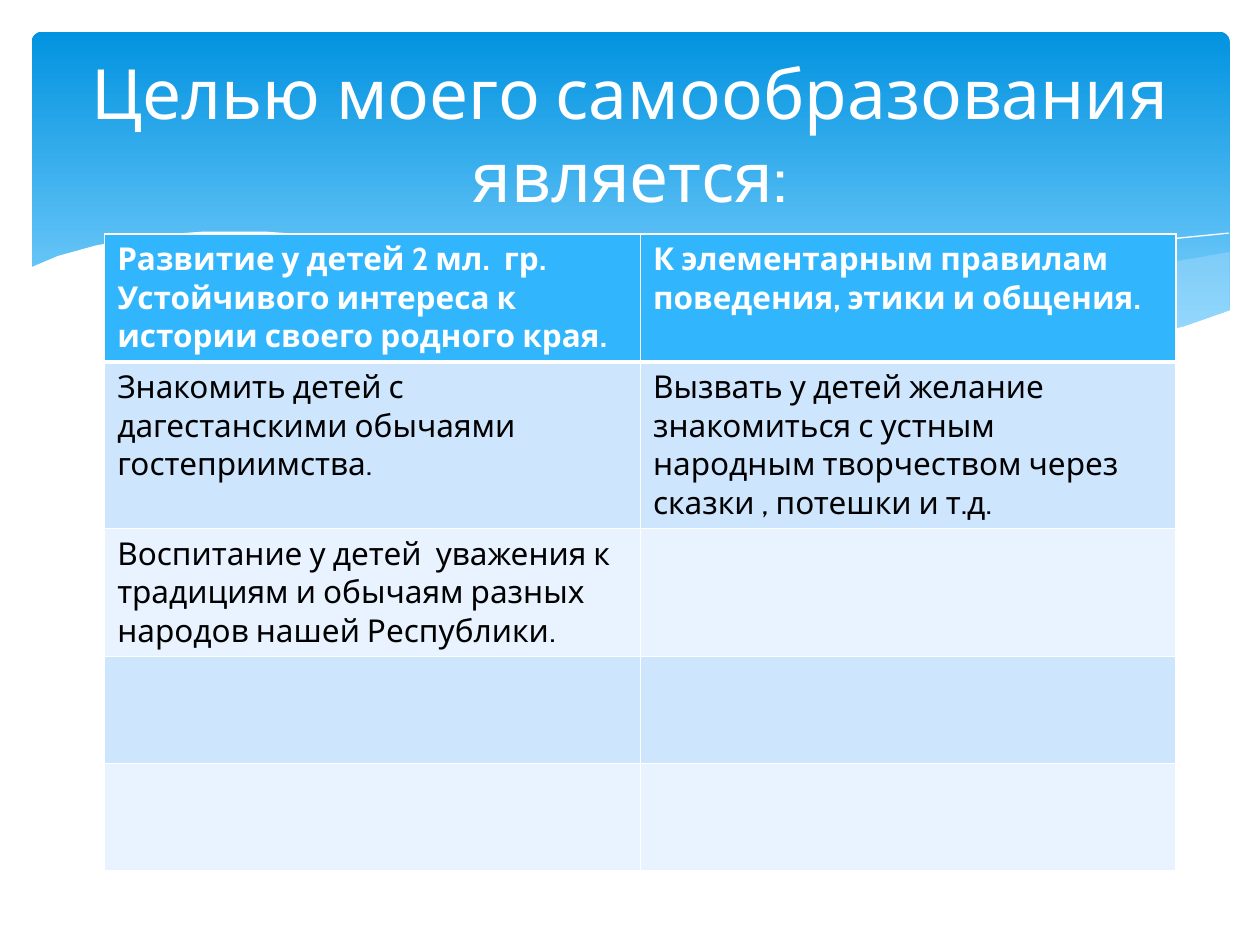
"""Build the slide that states the goals of self-education."""
from lxml.etree import SubElement
from pptx import Presentation
from pptx.dml.color import RGBColor
from pptx.enum.shapes import MSO_SHAPE
from pptx.enum.text import MSO_ANCHOR, MSO_AUTO_SIZE, PP_ALIGN
from pptx.oxml.ns import qn
from pptx.util import Cm, Pt

FONT = "Cabin"
COLORS = {
    "white": "FFFFFF", "text": "000000", "band_top": "0293E0", "band_bottom": "83D3FE",
    "wave": "C6E7FC", "header": "31B6FD", "odd": "CEE5FE", "even": "E8F3FF",
}
TITLE = "Целью моего самообразования является:"
ROWS = [
    ("Развитие у детей 2 мл.  гр. Устойчивого интереса к истории своего родного края.",
     "К элементарным правилам поведения, этики и общения."),
    ("Знакомить детей с дагестанскими обычаями гостеприимства.",
     "Вызвать у детей желание знакомиться с устным народным творчеством через "
     "сказки , потешки и т.д."),
    ("Воспитание у детей  уважения к традициям и обычаям разных народов нашей Республики.", ""),
    ("", ""),
    ("", ""),
]
HEADER_HEIGHT, ROW_HEIGHT, COLUMN_WIDTH = 0.33, 2.16, 10.8

RIGHT_WAVE = [
    (24.79, 5.08), (23.75, 5.26), (21.87, 5.66), (19.79, 6.15), (17.93, 6.53), (16.79, 6.73),
    (17.91, 6.88), (18.92, 6.99), (20.4, 7.06), (21.69, 7.01), (22.78, 6.86), (23.75, 6.65),
    (24.79, 6.27),
]
MIDDLE_WAVE = [
    (22.68, 6.93), (21.26, 6.73), (19.69, 6.45), (17.93, 6.1), (15.98, 5.64), (14.45, 5.28),
    (13.06, 5.03), (11.81, 4.85), (10.67, 4.75), (9.17, 4.7), (7.95, 4.78), (7.26, 4.85),
    (8.69, 5.05), (10.26, 5.36), (12.47, 5.89), (14.38, 6.3), (16.1, 6.63), (17.65, 6.86),
    (19, 7.01), (20.5, 7.06), (21.77, 7.04),
]
FALLING_LINE = [
    (7.85, 4.95), (8.74, 4.83), (9.83, 4.75), (11, 4.75), (12.42, 4.83), (14.12, 5),
    (16.15, 5.28), (18.47, 5.74), (21.11, 6.38), (23.04, 6.91),
]
RISING_LINE = [
    (15.57, 6.53), (17.65, 5.97), (19.71, 5.49), (22, 5.05), (23.47, 4.83), (24.77, 4.7),
]
WHITE_WAVE = [
    (24.82, 6.25), (23.88, 6.58), (22.83, 6.83), (21.59, 6.99), (20.55, 7.04), (19.33, 6.99),
    (17.98, 6.86), (16.46, 6.65), (14.71, 6.35), (12.78, 5.92), (10.62, 5.41), (8.64, 5),
    (6.88, 4.78), (5.36, 4.67), (4.09, 4.67), (3.02, 4.75), (1.93, 4.95), (1.17, 5.16),
    (0.58, 5.41), (0.58, 8.36), (24.82, 8.36),
]
WAVES = [
    (RIGHT_WAVE, "wave", 29), (MIDDLE_WAVE, "wave", 40),
    (FALLING_LINE, None, 100), (RISING_LINE, None, 100), (WHITE_WAVE, "white", 100),
]


def color(name):
    """Return the named colour."""
    return RGBColor.from_string(COLORS[name])


def write(frame, text, size=18, ink="text", bold=False, align=PP_ALIGN.LEFT):
    """Put one formatted paragraph into a text frame."""
    para = frame.paragraphs[0]
    para.alignment = align
    para.font.size = Pt(size)
    if text:
        span = para.add_run()
        span.text = text
        span.font.name, span.font.size, span.font.bold = FONT, Pt(size), bold
        span.font.color.rgb = color(ink)


def add_band(page):
    """Add the rounded gradient band."""
    band = page.shapes.add_shape(
        MSO_SHAPE.ROUNDED_RECTANGLE, Cm(0.64), Cm(0.64), Cm(24.15), Cm(6.86))
    band.adjustments[0] = 0.03
    band.shadow.inherit = False
    band.line.fill.background()
    band.fill.gradient()
    band.fill.gradient_angle = 270
    stops = zip(band.fill.gradient_stops, ("band_top", "band_bottom"), (0, 0.9))
    for stop, name, position in stops:
        stop.color.rgb = color(name)
        stop.position = position


def add_wave(page, points, fill, opacity):
    """Add a filled wave, or a thin white line when there is no fill."""
    start, *rest = [(Cm(x), Cm(y)) for x, y in points]
    builder = page.shapes.build_freeform(*start)
    builder.add_line_segments(rest, close=fill is not None)
    wave = builder.convert_to_shape()
    wave.shadow.inherit = False
    if fill is None:
        wave.fill.background()
        wave.line.color.rgb = color("white")
        wave.line.width = Cm(0)
        return
    wave.line.fill.background()
    wave.fill.solid()
    wave.fill.fore_color.rgb = color(fill)
    if opacity < 100:
        tint = wave.element.spPr.find(qn("a:solidFill"))[0]
        SubElement(tint, qn("a:alpha"), val=str(opacity * 1000))


def add_borders(cell, top, bottom):
    """Draw white borders with the given widths in points."""
    properties = cell._tc.get_or_add_tcPr()
    for side, width in (("L", 1), ("R", 1), ("T", top), ("B", bottom)):
        line = SubElement(properties, qn(f"a:ln{side}"), w=str(Pt(width)))
        SubElement(SubElement(line, qn("a:solidFill")), qn("a:srgbClr"), val=COLORS["white"])


def add_goals(page):
    """Add the table of goals."""
    frame = page.shapes.add_table(
        len(ROWS), 2, Cm(2.11), Cm(4.72), Cm(2 * COLUMN_WIDTH), Cm(12.7))
    table = frame.table
    for column in table.columns:
        column.width = Cm(COLUMN_WIDTH)
    for index, texts in enumerate(ROWS):
        header = index == 0
        table.rows[index].height = Cm(HEADER_HEIGHT if header else ROW_HEIGHT)
        fill = "header" if header else ("even", "odd")[index % 2]
        for cell, text in zip(table.rows[index].cells, texts):
            add_borders(cell, top=3 if index == 1 else 1, bottom=3 if header else 1)
            cell.fill.solid()
            cell.fill.fore_color.rgb = color(fill)
            write(cell.text_frame, text, ink="white" if header else "text", bold=header)
    frame.height = Cm(12.7)


def add_title(page):
    """Place the title in front of the band."""
    title = page.shapes.title
    title.left, title.top, title.width, title.height = Cm(1.27), Cm(0.94), Cm(22.86), Cm(3.48)
    title.text_frame.word_wrap = True
    title.text_frame.auto_size = MSO_AUTO_SIZE.NONE
    title.text_frame.vertical_anchor = MSO_ANCHOR.MIDDLE
    write(title.text_frame, TITLE, size=39.6, ink="white", align=PP_ALIGN.CENTER)
    title.element.getparent().append(title.element)


def main():
    """Assemble and save the deck."""
    deck = Presentation()
    deck.slide_width, deck.slide_height = Cm(25.4), Cm(19.05)
    page = deck.slides.add_slide(deck.slide_layouts.get_by_name("Title Only"))
    add_band(page)
    for points, fill, opacity in WAVES:
        add_wave(page, points, fill, opacity)
    add_goals(page)
    add_title(page)
    deck.save("out.pptx")


if __name__ == "__main__":
    main()
